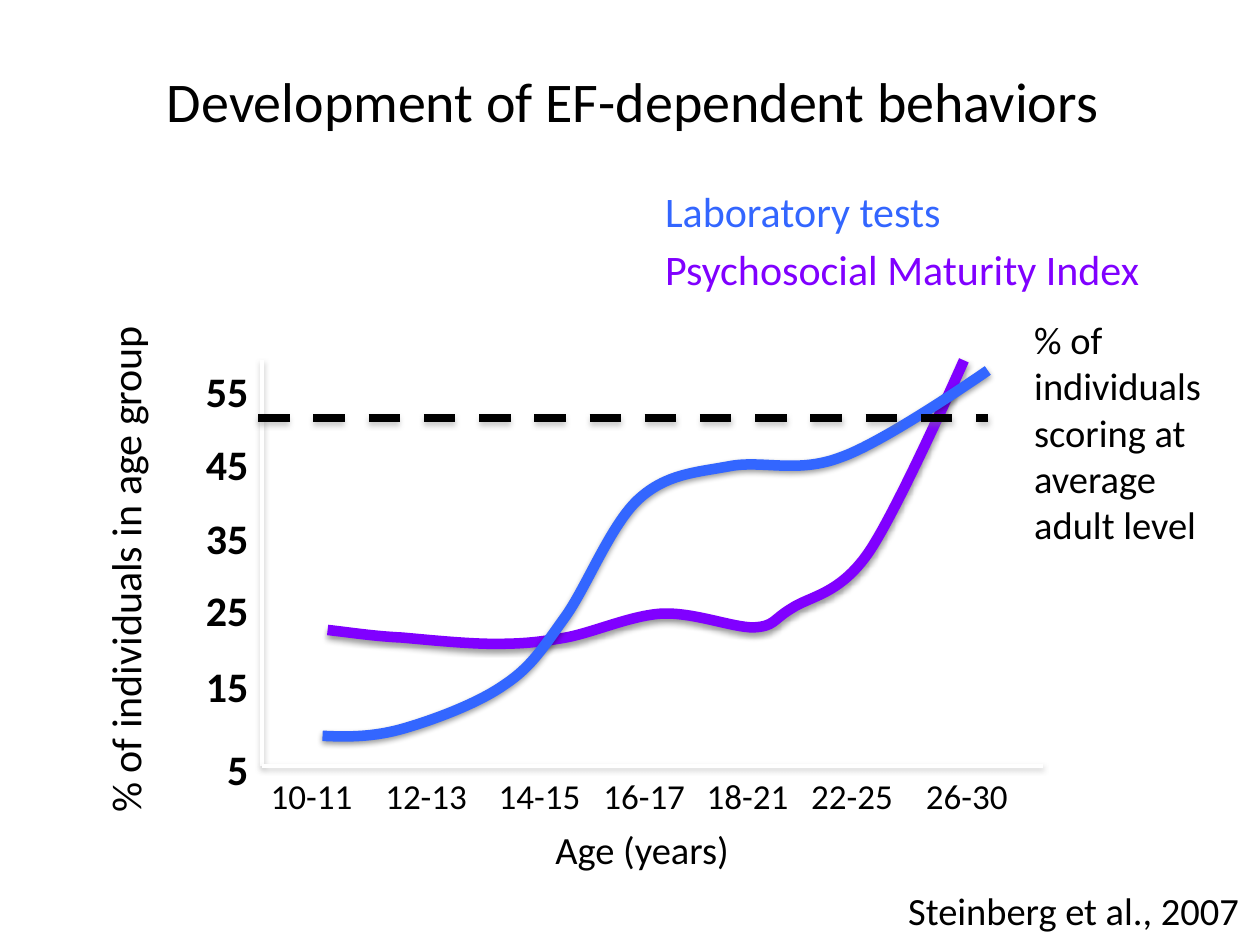
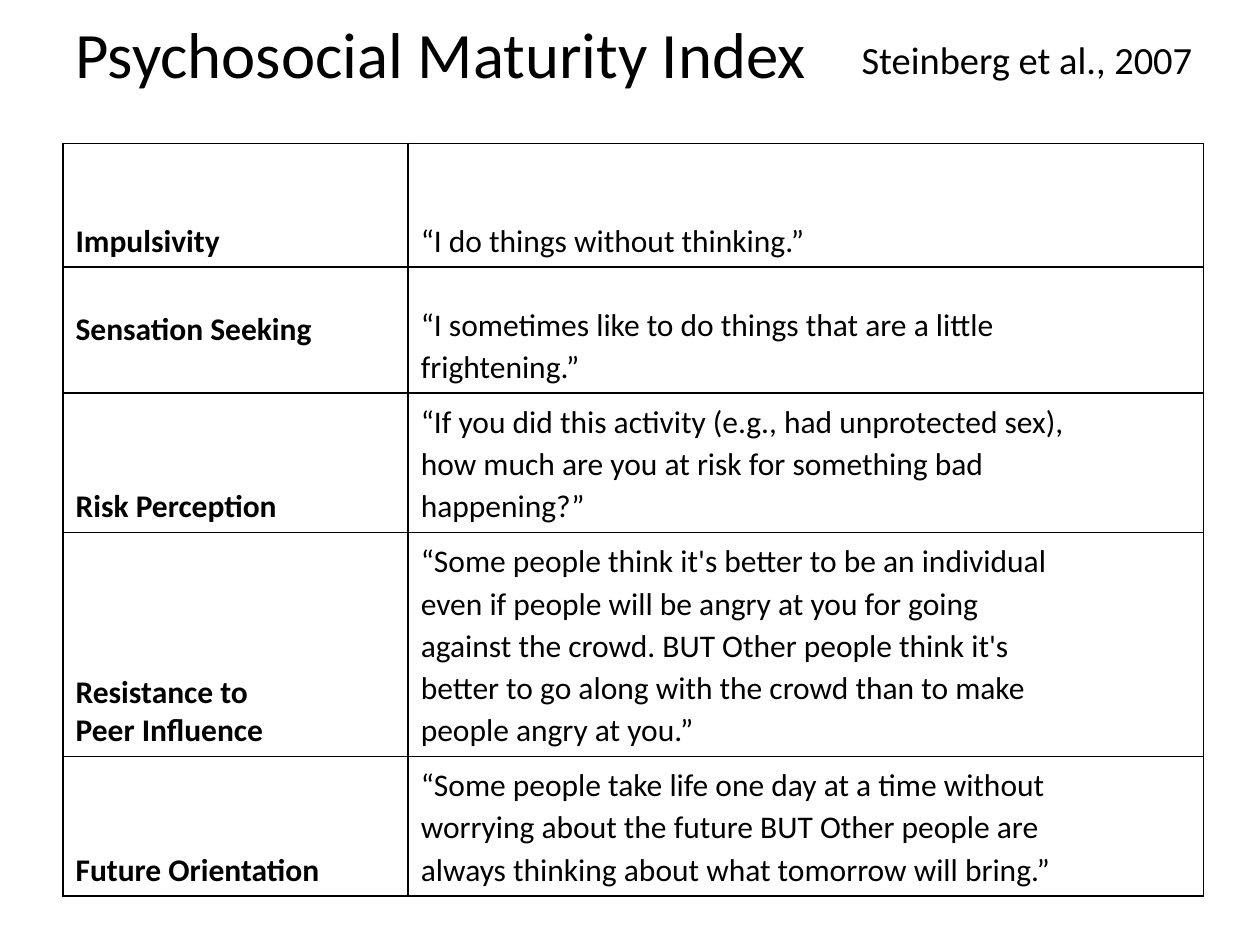
from lxml import etree
from pptx import Presentation
from pptx.dml.color import RGBColor
from pptx.enum.dml import MSO_LINE
from pptx.enum.shapes import MSO_CONNECTOR
from pptx.enum.text import MSO_ANCHOR, MSO_AUTO_SIZE, PP_ALIGN
from pptx.oxml.ns import qn
from pptx.util import Inches, Pt

LEFT, CENTER, RIGHT = PP_ALIGN.LEFT, PP_ALIGN.CENTER, PP_ALIGN.RIGHT
TOP, MIDDLE, BOTTOM = MSO_ANCHOR.TOP, MSO_ANCHOR.MIDDLE, MSO_ANCHOR.BOTTOM
GROW, FIXED = MSO_AUTO_SIZE.SHAPE_TO_FIT_TEXT, MSO_AUTO_SIZE.NONE
DASH, STRAIGHT = MSO_LINE.DASH, MSO_CONNECTOR.STRAIGHT
TITLE_ONLY = 5

FONT = "Calibri"
BLACK, WHITE, GREY = "000000", "FFFFFF", "808080"
BLUE, PURPLE = "3366FF", "8000FF"
SOURCE = "Steinberg et al., 2007"

# Start point, then three points (two handles and an end) for each curve piece
MATURITY = [
    (2.6, 5), (2.78, 5.02), (2.97, 5.05), (3.19, 5.06),
    (3.41, 5.08), (3.71, 5.11), (3.92, 5.11),
    (4.14, 5.11), (4.26, 5.1), (4.49, 5.06),
    (4.71, 5.02), (5.02, 4.88), (5.26, 4.87),
    (5.51, 4.86), (5.81, 4.98), (5.98, 4.98),
    (6.15, 4.97), (6.13, 4.92), (6.28, 4.83),
    (6.43, 4.73), (6.66, 4.72), (6.89, 4.39),
    (7.12, 4.06), (7.65, 2.86), (7.65, 2.86),
]
LAB_TESTS = [
    (2.56, 5.84), (2.76, 5.85), (2.97, 5.85), (3.21, 5.78),
    (3.45, 5.71), (3.8, 5.58), (4.01, 5.43),
    (4.22, 5.29), (4.31, 5.14), (4.49, 4.89),
    (4.66, 4.65), (4.85, 4.16), (5.07, 3.96),
    (5.29, 3.76), (5.52, 3.75), (5.79, 3.7),
    (6.05, 3.65), (6.33, 3.76), (6.67, 3.63),
    (7.02, 3.51), (7.84, 2.94), (7.84, 2.94),
]
LEVELS = [("55", 2.85), ("45", 3.43), ("35", 4.02),
          ("25", 4.59), ("15", 5.19), ("5", 5.85)]
AGES = [("10-11", 2.05), ("12-13", 2.96), ("14-15", 3.86), ("16-17", 4.69),
        ("18-21", 5.51), ("22-25", 6.34), ("26-30", 7.25)]

# Row height, scale name, sample item, bottom margin of the name
SCALES = [
    (0.98, "Impulsivity", "“I do things without thinking.”", 0.05),
    (1, "Sensation Seeking",
     "“I sometimes like to do things that are a little\nfrightening.”", 0.35),
    (1.09, "Risk Perception",
     "“If you did this activity (e.g., had unprotected sex),\n"
     "how much are you at risk for something bad\nhappening?”", 0.05),
    (1.75, "Resistance to\nPeer Influence",
     "“Some people think it's better to be an individual\n"
     "even if people will be angry at you for going\n"
     "against the crowd. BUT Other people think it's\n"
     "better to go along with the crowd than to make\n"
     "people angry at you.”", 0.05),
    (1.09, "Future Orientation",
     "“Some people take life one day at a time without\n"
     "worrying about the future BUT Other people are\n"
     "always thinking about what tomorrow will bring.”", 0.05),
]


def rgb(color):
    return RGBColor.from_string(color)


def child(parent, tag, **attrs):
    return etree.SubElement(parent, qn(tag), attrs)


def shade(shape, color):
    """Give a line or curve a soft shadow straight below it."""
    effects = child(shape.element.spPr, "a:effectLst")
    outer = child(effects, "a:outerShdw", blurRad=str(Pt(3.1)),
                  dist=str(Pt(1.6)), dir="5400000", rotWithShape="0")
    tone = child(outer, "a:srgbClr", val=color)
    child(tone, "a:alpha", val="38000")


def frame(cell):
    """Draw a thin black border on all sides of a cell."""
    props = cell._tc.get_or_add_tcPr()
    for spot, side in enumerate(("a:lnL", "a:lnR", "a:lnT", "a:lnB")):
        edge = child(props, side, w=str(Pt(1)))
        child(child(edge, "a:solidFill"), "a:srgbClr", val=BLACK)
        props.insert(spot, edge)


class Deck:
    def __init__(self):
        self.file = Presentation()
        self.file.slide_width = Inches(10)
        self.file.slide_height = Inches(7.5)
        self.slide = None

    def page(self):
        layout = self.file.slide_layouts[TITLE_ONLY]
        self.slide = self.file.slides.add_slide(layout)

    def style(self, frame, text, size, color=BLACK, bold=False, align=LEFT):
        frame.text = text
        for para in frame.paragraphs:
            para.alignment = align
            font = para.font
            font.name, font.size, font.bold = FONT, Pt(size), bold
            font.color.rgb = rgb(color)

    def title(self, text, box, size, align, anchor):
        shape = self.slide.shapes.title
        shape.left, shape.top, shape.width, shape.height = map(Inches, box)
        body = shape.text_frame
        body.auto_size, body.vertical_anchor = FIXED, anchor
        self.style(body, text, size, align=align)

    def label(self, text, box, size, wrap=False, turn=0, **look):
        shape = self.slide.shapes.add_textbox(*map(Inches, box))
        shape.rotation = turn
        body = shape.text_frame
        body.word_wrap, body.auto_size = wrap, GROW
        self.style(body, text, size, **look)

    def line(self, start, end, color, width, dash=None):
        ends = map(Inches, (*start, *end))
        shape = self.slide.shapes.add_connector(STRAIGHT, *ends)
        shape.line.color.rgb = rgb(color)
        shape.line.width = Pt(width)
        if dash:
            shape.line.dash_style = dash
        shade(shape, GREY)

    def curve(self, points, color):
        """Draw an open outline and turn each three steps into one curve."""
        spots = [(Inches(x), Inches(y)) for x, y in points]
        pen = self.slide.shapes.build_freeform(*spots[0])
        pen.add_line_segments(spots[1:], close=False)
        shape = pen.convert_to_shape()
        steps = list(shape.element.iter(qn("a:lnTo")))
        for first, *rest in zip(steps[::3], steps[1::3], steps[2::3]):
            first.tag = qn("a:cubicBezTo")
            for step in rest:
                first.append(step[0])
                step.getparent().remove(step)
        shape.fill.background()
        shape.line.color.rgb = rgb(color)
        shape.line.width = Pt(6)
        shade(shape, BLACK)

    def cell(self, cell, text, bold, space, foot):
        cell.fill.background()
        cell.vertical_anchor = BOTTOM
        cell.margin_left = cell.margin_right = Inches(0.1)
        cell.margin_top, cell.margin_bottom = Inches(0.05), Inches(foot)
        self.style(cell.text_frame, text, 18, bold=bold)
        for para in cell.text_frame.paragraphs:
            para.line_spacing = space
            props = para._p.get_or_add_pPr()
            props.set("marL", str(Inches(0.38)))
            props.set("indent", str(-Inches(0.38)))
        frame(cell)

    def table(self, rows, left, top, widths):
        height = sum(row[0] for row in rows)
        box = map(Inches, (left, top, sum(widths), height))
        table = self.slide.shapes.add_table(len(rows), 2, *box).table
        table.first_row = table.horz_banding = False
        for column, width in zip(table.columns, widths):
            column.width = Inches(width)
        for row, (tall, name, item, foot) in zip(table.rows, rows):
            row.height = Inches(tall)
            self.cell(row.cells[0], name, True, 1.0, foot)
            self.cell(row.cells[1], item, False, 1.1, 0.05)


def growth(deck):
    deck.page()
    deck.title("Development of EF-dependent behaviors",
               (0.19, 0.17, 9.67, 1.25), 32, CENTER, MIDDLE)
    deck.curve(MATURITY, PURPLE)
    origin = (2.08, 6.08)
    deck.line((2.08, 2.86), origin, WHITE, 2)
    deck.line(origin, (8.28, 6.08), WHITE, 2)
    for level, top in LEVELS:
        deck.label(level, (1.53, top, 0.54, 0.51), 24, bold=True, align=RIGHT)
    for age, left in AGES:
        deck.label(age, (left, 6.1, 0.86, 0.44), 20)
    deck.label("Age (years)", (4.31, 6.51, 1.61, 0.47), 22)
    deck.curve(LAB_TESTS, BLUE)
    deck.label("Laboratory tests", (5.18, 1.42, 4.4, 0.51), 24,
               wrap=True, color=BLUE)
    deck.label("Psychosocial Maturity Index", (5.18, 1.88, 4.02, 0.51), 24,
               color=PURPLE)
    deck.label(SOURCE, (7.11, 6.99, 2.87, 0.47), 22)
    deck.label("% of individuals scoring at average adult level",
               (8.11, 2.46, 1.62, 1.95), 22, wrap=True)
    deck.line((2.05, 3.32), (7.84, 3.32), BLACK, 4.5, DASH)
    deck.label("% of individuals in age group", (-1.06, 4.24, 4.11, 0.51), 24,
               turn=270)


def index(deck):
    deck.page()
    deck.title("Psychosocial Maturity Index", (0.5, 0.06, 9, 1.25), 37,
               LEFT, TOP)
    deck.table(SCALES, 0.5, 1.14, (2.74, 6.31))
    deck.label(SOURCE, (6.74, 0.24, 2.87, 0.47), 22)


def main():
    deck = Deck()
    growth(deck)
    index(deck)
    deck.file.save("out.pptx")


if __name__ == "__main__":
    main()
